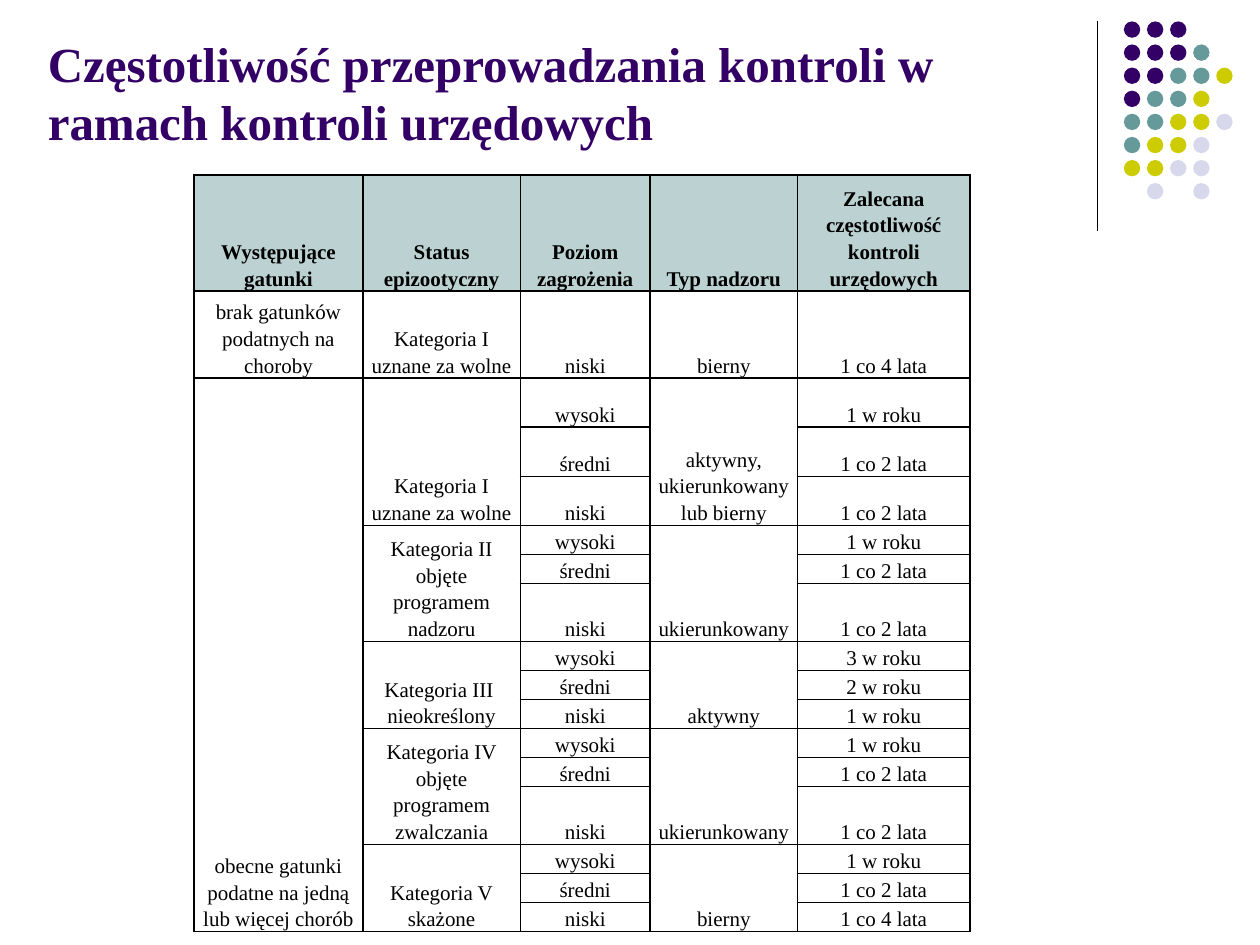
"""Build a slide with a table of official inspection frequencies."""
from copy import deepcopy

from lxml.etree import SubElement
from pptx import Presentation
from pptx.dml.color import RGBColor
from pptx.enum.shapes import MSO_CONNECTOR, MSO_SHAPE
from pptx.enum.text import MSO_ANCHOR, MSO_AUTO_SIZE, PP_ALIGN
from pptx.oxml.ns import qn
from pptx.util import Inches, Pt

THEME = {
    "font": "Times New Roman",
    "title_size": 28,
    "table_size": 12,
    "title": "330066",
    "ink": "000000",
    "header": "BCD2D2",
    "dots": {"p": "330066", "t": "669999", "y": "CCCC00", "l": "D8D8EC"},
}

TITLE = "Częstotliwość przeprowadzania kontroli w ramach kontroli urzędowych"
HEADERS = ["Występujące gatunki", "Status epizootyczny", "Poziom zagrożenia",
           "Typ nadzoru", "Zalecana częstotliwość kontroli urzędowych"]
NO_SPECIES = ["brak gatunków podatnych na choroby", "Kategoria I\nuznane za wolne",
              "niski", "bierny", "1 co 4 lata"]
SPECIES = "obecne gatunki podatne na jedną lub więcej chorób"
RISKS = ["wysoki", "średni", "niski"]
CATEGORIES = [
    ("Kategoria I\nuznane za wolne", "aktywny, ukierunkowany lub bierny",
     ["1 w roku", "1 co 2 lata", "1 co 2 lata"], [0.39, 0.39, 0.39]),
    ("Kategoria II objęte programem nadzoru", "ukierunkowany",
     ["1 w roku", "1 co 2 lata", "1 co 2 lata"], [0.23, 0.23, 0.46]),
    ("Kategoria III \nnieokreślony", "aktywny",
     ["3 w roku", "2 w roku", "1 w roku"], [0.23, 0.23, 0.23]),
    ("Kategoria IV\nobjęte programem zwalczania", "ukierunkowany",
     ["1 w roku", "1 co 2 lata", "1 co 2 lata"], [0.23, 0.23, 0.46]),
    ("Kategoria V\nskażone", "bierny",
     ["1 w roku", "1 co 2 lata", "1 co 4 lata"], [0.23, 0.23, 0.23]),
]
COLUMN_WIDTHS = [1.34, 1.25, 1.03, 1.17, 1.37]
TOP_ROW_HEIGHTS = [0.91, 0.69]
DOT_ROWS = ["ppp", "pppt", "pptty", "ptty", "ttyyl", "tyyl", "yyll", " l l"]


def write_text(frame, text, *, size, color, bold=False, align=PP_ALIGN.LEFT,
               anchor=MSO_ANCHOR.MIDDLE, spacing=1.0):
    frame.word_wrap = True
    frame.vertical_anchor = anchor
    paragraph = frame.paragraphs[0]
    paragraph.text = text
    paragraph.alignment = align
    paragraph.line_spacing = spacing
    for run in paragraph.runs:
        run.font.name = THEME["font"]
        run.font.size = Pt(size)
        run.font.bold = bold
        run.font.color.rgb = RGBColor.from_string(color)
    for line_break in paragraph._p.findall(qn("a:br")):
        line_break.append(deepcopy(paragraph.runs[0]._r.rPr))


def add_borders(cell):
    properties = cell._tc.get_or_add_tcPr()
    for side in ("a:lnL", "a:lnR", "a:lnT", "a:lnB"):
        border = SubElement(properties, qn(side), w=str(Pt(1)))
        fill = SubElement(border, qn("a:solidFill"))
        SubElement(fill, qn("a:srgbClr"), val=THEME["ink"])


def add_title(slide):
    title = slide.shapes.title
    title.left, title.top = Inches(0.28), Inches(0.21)
    title.width, title.height = Inches(7.56), Inches(1.04)
    write_text(title.text_frame, TITLE, size=THEME["title_size"],
               color=THEME["title"], bold=True)
    title.text_frame.auto_size = MSO_AUTO_SIZE.SHAPE_TO_FIT_TEXT


def add_decoration(slide):
    divider = slide.shapes.add_connector(
        MSO_CONNECTOR.STRAIGHT, Inches(8.71), Inches(0.17), Inches(8.71), Inches(1.83))
    divider.line.color.rgb = RGBColor.from_string(THEME["ink"])
    divider.line.width = Pt(0.75)
    SubElement(divider._element.spPr, qn("a:effectLst"))
    dots = slide.shapes.add_group_shape()
    pitch = 0.55 / 3
    for row, colors in enumerate(DOT_ROWS):
        for column, key in enumerate(colors):
            if key == " ":
                continue
            dot = dots.shapes.add_shape(
                MSO_SHAPE.OVAL, Inches(8.92 + column * pitch),
                Inches(0.17 + row * pitch), Inches(0.13), Inches(0.13))
            dot.shadow.inherit = False
            dot.fill.solid()
            dot.fill.fore_color.rgb = RGBColor.from_string(THEME["dots"][key])
            dot.line.fill.background()


def add_frequencies(slide):
    rows, heights = [HEADERS, NO_SPECIES], list(TOP_ROW_HEIGHTS)
    for status, supervision, frequencies, group_heights in CATEGORIES:
        for index, (risk, frequency) in enumerate(zip(RISKS, frequencies)):
            first = index == 0
            species = SPECIES if len(rows) == 2 else ""
            rows.append([species, status if first else "", risk,
                         supervision if first else "", frequency])
        heights += group_heights

    table = slide.shapes.add_table(
        len(rows), len(HEADERS), Inches(1.54), Inches(1.39),
        Inches(sum(COLUMN_WIDTHS)), Inches(sum(heights))).table
    table.horz_banding = False
    for column, width in zip(table.columns, COLUMN_WIDTHS):
        column.width = Inches(width)
    for row, height in zip(table.rows, heights):
        row.height = Inches(height)

    for r, texts in enumerate(rows):
        for c, text in enumerate(texts):
            cell = table.cell(r, c)
            cell.margin_left = cell.margin_right = Inches(0.04)
            cell.margin_top = cell.margin_bottom = 0
            cell.vertical_anchor = MSO_ANCHOR.BOTTOM
            add_borders(cell)
            if r == 0:
                cell.fill.solid()
                cell.fill.fore_color.rgb = RGBColor.from_string(THEME["header"])
            else:
                cell.fill.background()
            if text:
                write_text(cell.text_frame, text, size=THEME["table_size"],
                           color=THEME["ink"], bold=r == 0, align=PP_ALIGN.CENTER,
                           anchor=MSO_ANCHOR.BOTTOM, spacing=1.15)

    table.cell(2, 0).merge(table.cell(len(rows) - 1, 0))
    for start in range(2, len(rows), len(RISKS)):
        for column in (1, 3):
            table.cell(start, column).merge(table.cell(start + len(RISKS) - 1, column))


def main():
    presentation = Presentation()
    presentation.slide_width, presentation.slide_height = Inches(10), Inches(7.5)
    slide = presentation.slides.add_slide(presentation.slide_layouts[5])
    add_decoration(slide)
    add_title(slide)
    add_frequencies(slide)
    presentation.save("out.pptx")


if __name__ == "__main__":
    main()
